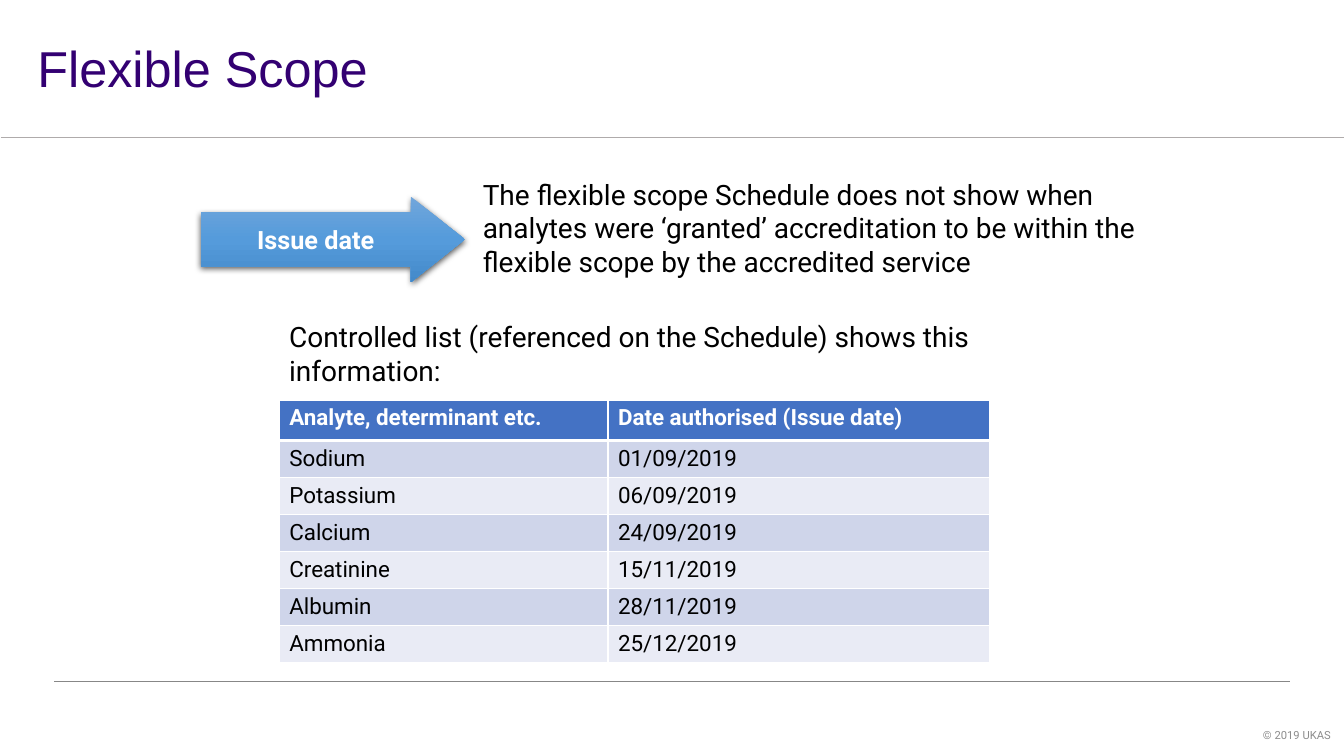
from lxml.etree import SubElement
from pptx import Presentation
from pptx.dml.color import RGBColor
from pptx.enum.shapes import MSO_CONNECTOR, MSO_SHAPE
from pptx.enum.text import MSO_ANCHOR as Anchor, MSO_AUTO_SIZE as AutoSize, PP_ALIGN as Align
from pptx.oxml import parse_xml
from pptx.oxml.ns import nsdecls, qn
from pptx.util import Inches, Pt

COLORS = {
    "title": "330072", "text": "000000", "white": "FFFFFF", "footer": "8C8C8C",
    "top_rule": "AFABAB", "bottom_rule": "878787",
    "header": "4472C4", "odd_row": "CFD5EA", "even_row": "E9EBF5",
    "arrow_top": "71A6DB", "arrow_middle": "559BDB", "arrow_bottom": "448ACA",
}
ANALYTES = [
    ("Analyte, determinant etc.", "Date authorised (Issue date)"),
    ("Sodium", "01/09/2019"),
    ("Potassium", "06/09/2019"),
    ("Calcium", "24/09/2019"),
    ("Creatinine", "15/11/2019"),
    ("Albumin", "28/11/2019"),
    ("Ammonia", "25/12/2019"),
]


def rgb(name):
    return RGBColor.from_string(COLORS[name])


def inches(*values):
    return [Inches(value) for value in values]


class SlideBuilder:
    font = "Roboto"

    def __init__(self, slide):
        self.slide = slide

    def set_text(self, frame, text, size, color="text", bold=False, align=Align.LEFT, font=None):
        frame.text = text
        paragraph = frame.paragraphs[0]
        paragraph.alignment = align
        style = paragraph.font
        style.name, style.size, style.bold = font or self.font, Pt(size), bold
        style.color.rgb = rgb(color)
        return paragraph

    def title(self, text, *box):
        title = self.slide.shapes.title
        title.left, title.top, title.width, title.height = inches(*box)
        frame = title.text_frame
        frame.auto_size, frame.vertical_anchor = AutoSize.NONE, Anchor.MIDDLE
        self.set_text(frame, text, 36, "title", font="Arial").line_spacing = 0.9

    def text(self, text, *box, size=20, color="text", align=Align.LEFT, anchor=Anchor.TOP):
        frame = self.slide.shapes.add_textbox(*inches(*box)).text_frame
        frame.word_wrap, frame.vertical_anchor = True, anchor
        self.set_text(frame, text, size, color, align=align)

    def rule(self, left, right, y, color):
        rule = self.slide.shapes.add_connector(MSO_CONNECTOR.STRAIGHT, *inches(left, y, right, y))
        rule.line.color.rgb, rule.line.width = rgb(color), Pt(0.5)
        SubElement(rule._element.spPr, qn("a:effectLst"))

    def arrow(self, text, *box):
        """Add a right arrow with a vertical gradient and a soft shadow below."""
        arrow = self.slide.shapes.add_shape(MSO_SHAPE.RIGHT_ARROW, *inches(*box))
        arrow.adjustments[0] = arrow.adjustments[1] = 0.63
        arrow.line.fill.background()
        arrow.fill.gradient()
        arrow.fill.gradient_angle = 270
        properties = arrow._element.spPr
        stops = properties.find(qn("a:gradFill")).find(qn("a:gsLst"))
        stops.clear()
        for percent, color in ((0, "arrow_top"), (50, "arrow_middle"), (100, "arrow_bottom")):
            stop = SubElement(stops, qn("a:gs"), pos=str(percent * 1000))
            SubElement(stop, qn("a:srgbClr"), val=COLORS[color])
        arrow.shadow.inherit = False
        properties.find(qn("a:effectLst")).append(parse_xml(
            f'<a:outerShdw {nsdecls("a")} blurRad="{Pt(4.5)}" dist="{Pt(1.5)}" dir="5400000"'
            ' algn="ctr" rotWithShape="0"><a:srgbClr val="000000">'
            '<a:alpha val="63000"/></a:srgbClr></a:outerShdw>'))
        arrow.text_frame.vertical_anchor = Anchor.MIDDLE
        self.set_text(arrow.text_frame, text, 18, "white", True, Align.CENTER)

    def cell_borders(self, cell, top, bottom):
        """Draw white borders, with the top and bottom widths in points."""
        widths = {"L": 1, "R": 1, "T": top, "B": bottom}
        for position, (side, width) in enumerate(widths.items()):
            cell._tc.get_or_add_tcPr().insert(position, parse_xml(
                f'<a:ln{side} {nsdecls("a")} w="{Pt(width)}"><a:solidFill>'
                f'<a:srgbClr val="{COLORS["white"]}"/></a:solidFill></a:ln{side}>'))

    def table(self, rows, left, top, widths, header_height, row_height):
        height = header_height + row_height * (len(rows) - 1)
        table = self.slide.shapes.add_table(
            len(rows), len(widths), *inches(left, top, sum(widths), height)).table
        for column, width in zip(table.columns, widths):
            column.width = Inches(width)
        for r, values in enumerate(rows):
            header = r == 0
            table.rows[r].height = Inches(header_height if header else row_height)
            fill = "header" if header else "odd_row" if r % 2 else "even_row"
            for c, value in enumerate(values):
                cell = table.cell(r, c)
                cell.fill.solid()
                cell.fill.fore_color.rgb = rgb(fill)
                self.cell_borders(cell, 3 if r == 1 else 1, 3 if header else 1)
                self.set_text(cell.text_frame, value, 16, "white" if header else "text", header)


def main():
    deck = Presentation()
    deck.slide_width, deck.slide_height = inches(13.33, 7.5)
    builder = SlideBuilder(deck.slides.add_slide(deck.slide_layouts[5]))

    builder.rule(0.54, 12.79, 6.76, "bottom_rule")
    builder.rule(0.01, 13.33, 1.36, "top_rule")
    builder.text("© 2019 UKAS", 10.3, 7.09, 3, 0.4, size=8, color="footer",
                 align=Align.RIGHT, anchor=Anchor.MIDDLE)
    builder.title("Flexible Scope", 0.27, -0.02, 11.5, 1.45)
    builder.table(ANALYTES, 2.77, 3.97, (3.26, 3.79), 0.4, 0.36)
    builder.arrow("Issue date", 1.99, 1.95, 2.62, 0.85)
    builder.text("The flexible scope Schedule does not show when analytes were ‘granted’ "
                 "accreditation to be within the flexible scope by the accredited service",
                 4.69, 1.71, 7.16, 1.51)
    builder.text("Controlled list (referenced on the Schedule) shows this information:",
                 2.77, 3.12, 7.6, 0.77)
    deck.save("out.pptx")


if __name__ == "__main__":
    main()
